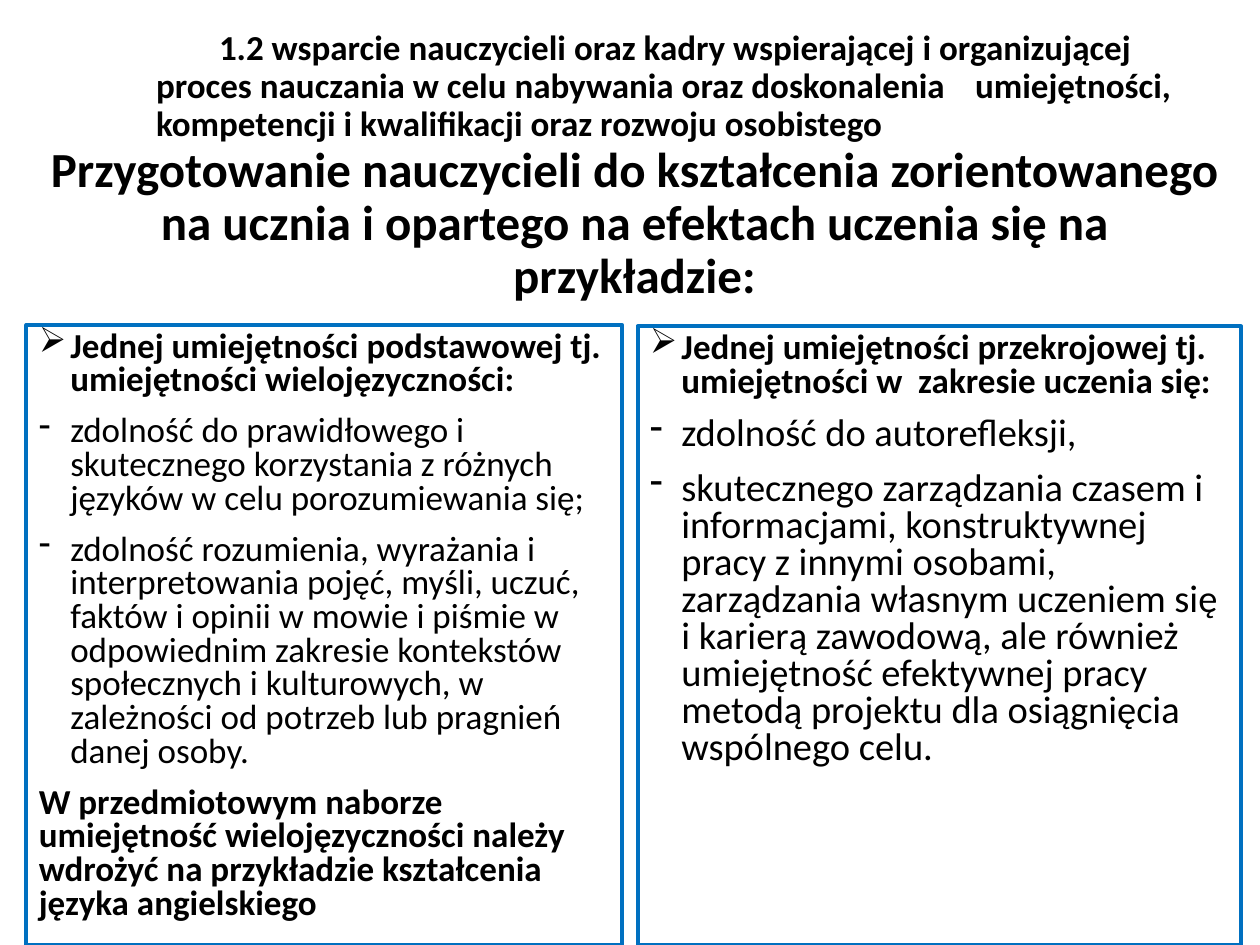
import pptx
import pptx.util
import pptx.dml.color
import pptx.enum.shapes
import pptx.enum.text
import pptx.oxml.ns
import lxml.etree

Inches = pptx.util.Inches
Pt = pptx.util.Pt
ALIGN = pptx.enum.text.PP_ALIGN
COLORS = {"text": "000000", "border": "0070C0"}


class SlideBuilder:
    font = "Calibri"

    def __init__(self, prs):
        self.s = prs.slides.add_slide(prs.slide_layouts[6])

    def color(self, name):
        return pptx.dml.color.RGBColor.from_string(COLORS[name])

    def run(self, p, text, size, bold):
        r = p.add_run()
        r.text = text
        r.font.name = self.font
        r.font.size = Pt(size)
        r.font.bold = bold
        r.font.color.rgb = self.color("text")

    def bullet(self, p, char):
        pPr = p._p.get_or_add_pPr()
        pPr.set("marL", str(Inches(0.25)))
        pPr.set("indent", str(-Inches(0.25)))
        bu = lxml.etree.SubElement(pPr, pptx.oxml.ns.qn("a:buChar"))
        bu.set("char", char)

    def heading(self, box, lines, size, align, top_inset):
        sp = self.s.shapes.add_textbox(*map(Inches, box))
        tf = sp.text_frame
        tf.word_wrap = True
        tf.margin_top = Inches(top_inset)
        tf.margin_bottom = 0
        tf.vertical_anchor = pptx.enum.text.MSO_ANCHOR.TOP
        p = tf.paragraphs[0]
        p.alignment = align
        p.line_spacing = 0.9
        for i, line in enumerate(lines):
            if i:
                p.add_line_break()
            self.run(p, line, size, True)

    def panel(self, box, items):
        sp = self.s.shapes.add_shape(
            pptx.enum.shapes.MSO_SHAPE.RECTANGLE, *map(Inches, box))
        sp.shadow.inherit = False
        sp.fill.background()
        sp.line.color.rgb = self.color("border")
        sp.line.width = Pt(2.25)
        tf = sp.text_frame
        tf.word_wrap = True
        tf.vertical_anchor = pptx.enum.text.MSO_ANCHOR.TOP
        for i, (char, text, size, bold) in enumerate(items):
            p = tf.add_paragraph() if i else tf.paragraphs[0]
            if char:
                self.bullet(p, char)
            p.alignment = ALIGN.LEFT
            p.line_spacing = 0.8
            p.space_before = Pt(10 if i else 0)
            self.run(p, text, size, bold)


def main():
    prs = pptx.Presentation()
    prs.slide_width, prs.slide_height = Inches(10), Inches(7.5)
    slide = SlideBuilder(prs)
    slide.heading((1.14, 0.2, 8.86, 0.95), [
        "\t1.2 wsparcie nauczycieli oraz kadry wspierającej i organizującej",
        "proces nauczania w celu nabywania oraz doskonalenia \tumiejętności,",
        "kompetencji i kwalifikacji oraz rozwoju osobistego",
    ], 20, ALIGN.LEFT, 0.04)
    slide.panel((0.21, 2.58, 4.73, 4.92), [
        ("➢", "Jednej umiejętności podstawowej tj. umiejętności "
              "wielojęzyczności:", 20, True),
        ("-", "zdolność do prawidłowego i skutecznego korzystania z różnych "
              "języków w celu porozumiewania się;", 20, False),
        ("-", "zdolność rozumienia, wyrażania i interpretowania pojęć, myśli, "
              "uczuć, faktów i opinii w mowie i piśmie w odpowiednim zakresie "
              "kontekstów społecznych i kulturowych, w zależności od potrzeb "
              "lub pragnień danej osoby.", 20, False),
        (None, "W przedmiotowym naborze umiejętność wielojęzyczności należy "
               "wdrożyć na przykładzie kształcenia języka angielskiego",
         20, True),
    ])
    slide.panel((5.06, 2.59, 4.79, 4.91), [
        ("➢", "Jednej umiejętności przekrojowej tj. umiejętności w  zakresie "
              "uczenia się:", 20, True),
        ("-", "zdolność do autorefleksji,", 22, False),
        ("-", "skutecznego zarządzania czasem i informacjami, konstruktywnej "
              "pracy z innymi osobami, zarządzania własnym uczeniem się "
              "i karierą zawodową, ale również umiejętność efektywnej pracy "
              "metodą projektu dla osiągnięcia wspólnego celu.", 22, False),
    ])
    slide.heading((0.21, 1.15, 9.65, 1.3), [
        "Przygotowanie nauczycieli do kształcenia zorientowanego na ucznia "
        "i opartego na efektach uczenia się na przykładzie:",
    ], 28, ALIGN.CENTER, 0)
    prs.save("out.pptx")


if __name__ == "__main__":
    main()
